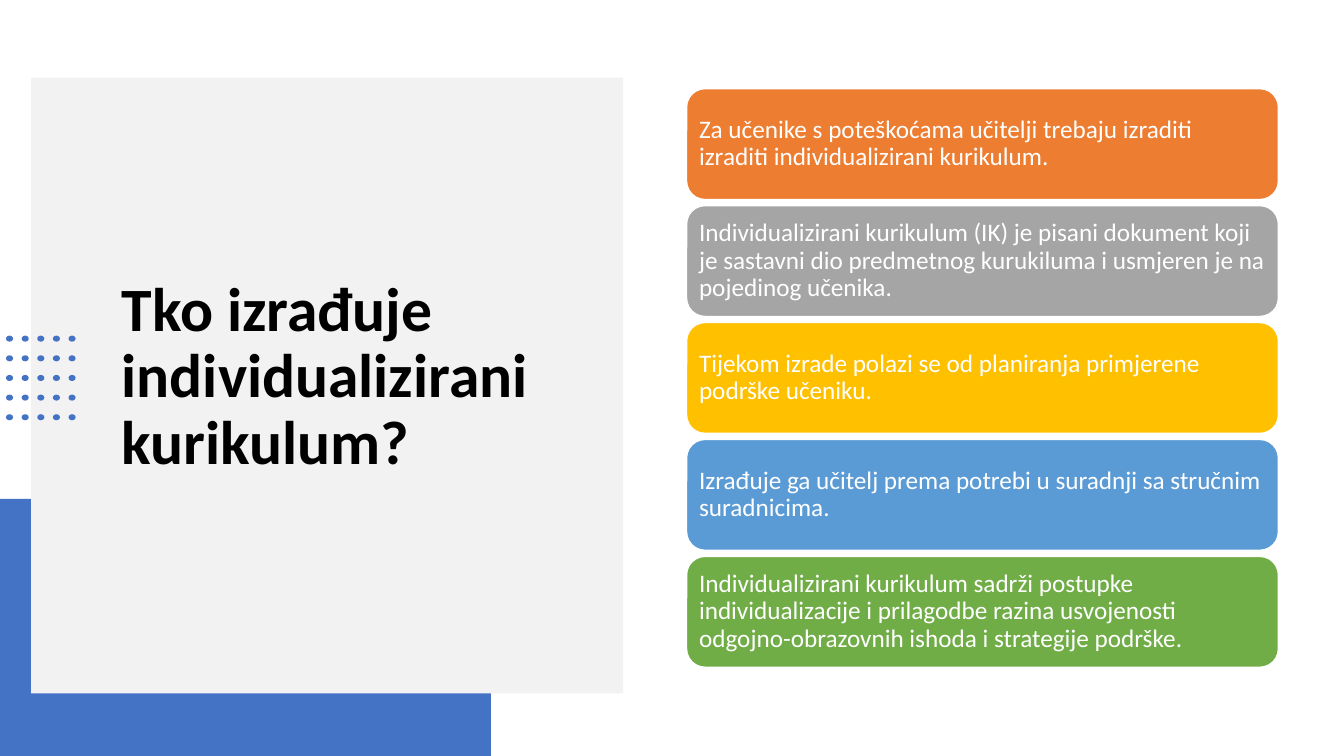
import pptx
import pptx.dml.color
import pptx.enum.shapes
import pptx.enum.text
import pptx.util

Inches = pptx.util.Inches
Shapes = pptx.enum.shapes.MSO_SHAPE

COLORS = {
    "blue": "4472C4", "panel": "F2F2F2", "black": "000000", "white": "FFFFFF",
    "orange": "ED7D31", "gray": "A5A5A5", "gold": "FFC000",
    "sky": "5B9BD5", "green": "70AD47",
}

CARDS = [
    ("orange", "Za učenike s poteškoćama učitelji trebaju izraditi izraditi "
               "individualizirani kurikulum."),
    ("gray", "Individualizirani kurikulum (IK) je pisani dokument koji je sastavni dio "
             "predmetnog kurukiluma i usmjeren je na pojedinog učenika."),
    ("gold", "Tijekom izrade polazi se od planiranja primjerene podrške učeniku."),
    ("sky", "Izrađuje ga učitelj prema potrebi u suradnji sa stručnim suradnicima."),
    ("green", "Individualizirani kurikulum sadrži postupke individualizacije i prilagodbe "
              "razina usvojenosti odgojno-obrazovnih ishoda i strategije podrške."),
]


def rgb(name):
    return pptx.dml.color.RGBColor.from_string(COLORS[name])


def set_attributes(target, values):
    for name, value in values.items():
        setattr(target, name, value)


class SlideBuilder:
    font_name = "Calibri"
    line_spacing = 0.9

    def __init__(self, slide):
        self.slide = slide

    def add_shape(self, kind, box, color, line=None, parent=None):
        shapes = (parent or self.slide).shapes
        shape = shapes.add_shape(kind, *map(Inches, box))
        shape.shadow.inherit = False
        shape.fill.solid()
        shape.fill.fore_color.rgb = rgb(color)
        if line:
            shape.line.color.rgb = rgb(line)
            shape.line.width = pptx.util.Pt(1)
        else:
            shape.line.fill.background()
        return shape

    def add_text(self, shape, text, size, color, bold=False, insets=(0.1, 0.05)):
        """Fill a shape with one left-aligned, vertically centred paragraph."""
        horizontal, vertical = map(Inches, insets)
        frame = shape.text_frame
        set_attributes(frame, {
            "word_wrap": True,
            "vertical_anchor": pptx.enum.text.MSO_ANCHOR.MIDDLE,
            "margin_left": horizontal, "margin_right": horizontal,
            "margin_top": vertical, "margin_bottom": vertical,
        })
        paragraph = frame.paragraphs[0]
        set_attributes(paragraph, {
            "alignment": pptx.enum.text.PP_ALIGN.LEFT,
            "line_spacing": self.line_spacing,
        })
        run = paragraph.add_run()
        run.text = text
        set_attributes(run.font, {
            "name": self.font_name, "size": pptx.util.Pt(size), "bold": bold,
        })
        run.font.color.rgb = rgb(color)

    def add_title(self, text, box):
        title = self.slide.shapes.add_textbox(*map(Inches, box))
        self.add_text(title, text, 44, "black", bold=True)

    def add_dot_grid(self, left, top, count=5):
        group = self.slide.shapes.add_group_shape()
        for column in range(count):
            for row in range(count):
                box = (left + column * 0.155, top + row * 0.195, 0.07, 0.06)
                self.add_shape(Shapes.OVAL, box, "blue", parent=group)

    def add_cards(self, cards, left, top, pitch=1.16):
        group = self.slide.shapes.add_group_shape()
        for index, (color, text) in enumerate(cards):
            box = (left, top + index * pitch, 5.87, 1.1)
            card = self.add_shape(Shapes.ROUNDED_RECTANGLE, box, color, "white", group)
            self.add_text(card, text, 18, "white", insets=(0.07, 0.07))


def main():
    presentation = pptx.Presentation()
    set_attributes(presentation, {
        "slide_width": Inches(13.33), "slide_height": Inches(7.5),
    })
    builder = SlideBuilder(presentation.slides.add_slide(presentation.slide_layouts[6]))
    builder.add_shape(Shapes.RECTANGLE, (0, 4.95, 4.87, 2.55), "blue")
    builder.add_shape(Shapes.RECTANGLE, (0.31, 0.77, 5.87, 6.11), "panel")
    builder.add_title("Tko izrađuje individualizirani kurikulum?", (1.11, 1.47, 4.59, 4.56))
    builder.add_dot_grid(0.06, 3.33)
    builder.add_cards(CARDS, 6.81, 0.88)
    presentation.save("out.pptx")


if __name__ == "__main__":
    main()
